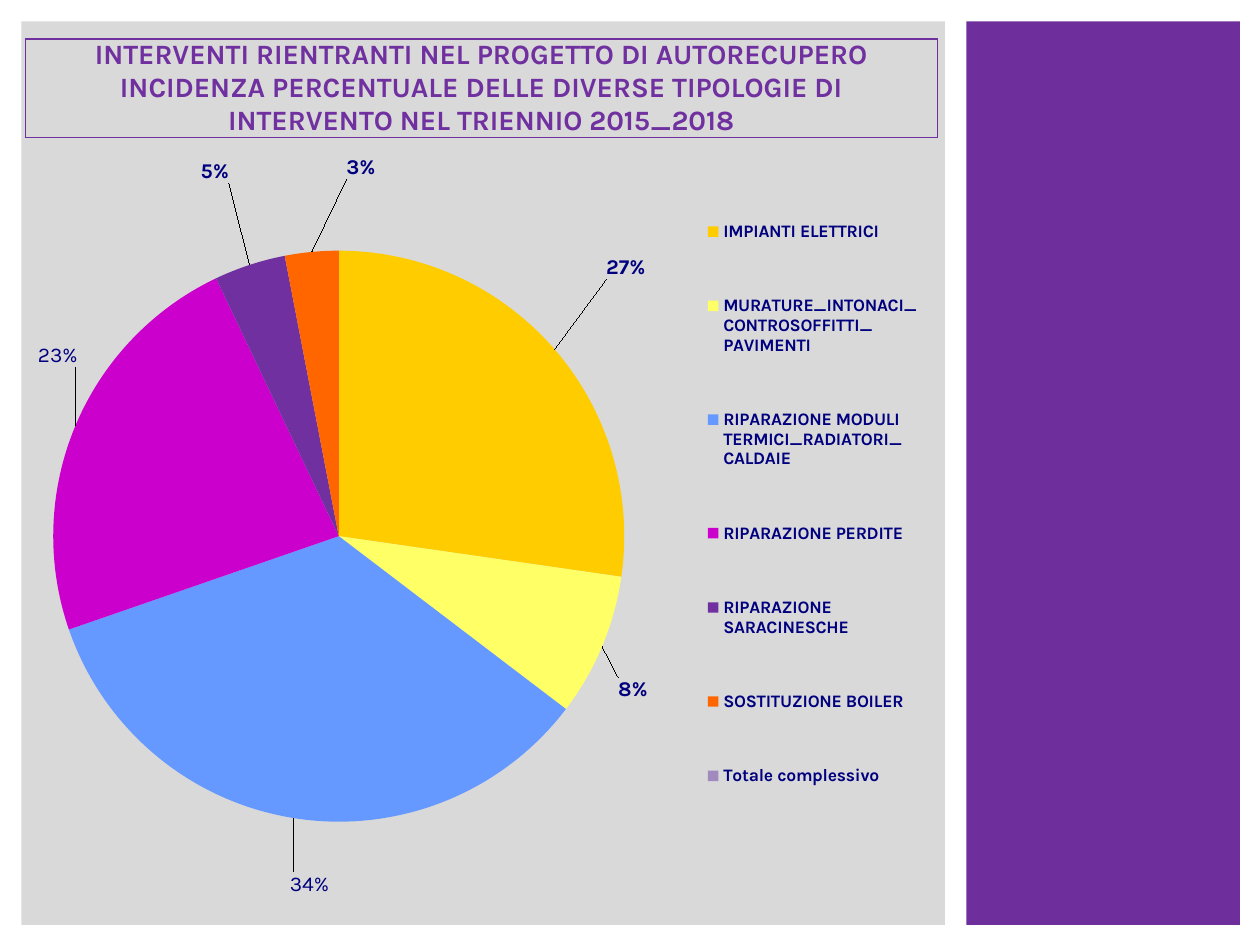
from lxml import etree
from pptx import Presentation
from pptx.chart.data import CategoryChartData
from pptx.dml.color import RGBColor
from pptx.enum import chart as charts, shapes, text
from pptx.oxml.ns import qn
from pptx.util import Inches, Pt

WHITE = RGBColor(0xFF, 0xFF, 0xFF)
GREY = RGBColor(0xD9, 0xD9, 0xD9)
PURPLE = RGBColor(0x6E, 0x2F, 0x9D)
VIOLET = RGBColor(0x70, 0x30, 0xA0)
NAVY = RGBColor(0x00, 0x00, 0x7F)
GOLD = RGBColor(0xFF, 0xCC, 0x00)
YELLOW = RGBColor(0xFF, 0xFF, 0x66)
BLUE = RGBColor(0x66, 0x99, 0xFF)
MAGENTA = RGBColor(0xCC, 0x00, 0xCC)
ORANGE = RGBColor(0xFF, 0x66, 0x00)
LILAC = RGBColor(0xA0, 0x8A, 0xBE)
FONT = "Karla"


def style(font, size, color, bold):
    font.name, font.size, font.bold = FONT, Pt(size), bold
    font.color.rgb = color


def manual_layout(**values):
    layout = etree.Element(qn("c:layout"))
    manual = etree.SubElement(layout, qn("c:manualLayout"))
    for tag, value in values.items():
        etree.SubElement(manual, qn(f"c:{tag}")).set("val", str(value))
    return layout


deck = Presentation()
deck.slide_width, deck.slide_height = Inches(10), Inches(7.5)
slide = deck.slides.add_slide(deck.slide_layouts[6])
slide.background.fill.solid()
slide.background.fill.fore_color.rgb = GREY

for left, top, width, height, color in [
    (0, 0, 10, 7.5, WHITE),
    (7.67, 0.17, 2.17, 7.17, PURPLE),
    (0.17, 0.17, 7.33, 7.17, GREY),
]:
    panel = slide.shapes.add_shape(
        shapes.MSO_SHAPE.RECTANGLE,
        Inches(left), Inches(top), Inches(width), Inches(height))
    panel.shadow.inherit = False
    panel.fill.solid()
    panel.fill.fore_color.rgb = color
    panel.line.fill.background()

interventions = [
    ("IMPIANTI ELETTRICI", 27, GOLD, "27%", True, 0.05, -0.07),
    ("MURATURE_INTONACI_ CONTROSOFFITTI_ PAVIMENTI", 8, YELLOW, "8%", True, 0.01, 0.03),
    ("RIPARAZIONE MODULI TERMICI_RADIATORI_ CALDAIE", 34, BLUE, "34%", False, 0.04, 0.05),
    ("RIPARAZIONE PERDITE", 23, MAGENTA, "23%", False, 0.01, -0.06),
    ("RIPARAZIONE SARACINESCHE", 4, VIOLET, "5%", True, -0.02, -0.08),
    ("SOSTITUZIONE BOILER", 3, ORANGE, "3%", True, 0.07, -0.07),
    ("Totale complessivo", None, LILAC, None, True, 0, 0),
]
shares = CategoryChartData()
shares.categories = [row[0] for row in interventions]
shares.add_series("Series 1", [row[1] for row in interventions])
pie = slide.shapes.add_chart(
    charts.XL_CHART_TYPE.PIE, Inches(0.2), Inches(0),
    Inches(7.32), Inches(7.37), shares).chart
pie.has_title = False
style(pie.font, 10, NAVY, False)
pie.plots[0].vary_by_categories = True

series = pie.plots[0].series[0]
series.data_labels.show_value = False
for index, (_, _, color, share, bold, dx, dy) in enumerate(interventions):
    point = series.points[index]
    point.format.fill.solid()
    point.format.fill.fore_color.rgb = color
    point.format.line.fill.background()
    if share:
        label = point.data_label
        label.text_frame.text = share
        style(label.text_frame.paragraphs[0].runs[0].font, 12, NAVY, bold)
        label.position = charts.XL_LABEL_POSITION.OUTSIDE_END
        label_xml = series.data_labels._element.findall(qn("c:dLbl"))[index]
        for old in label_xml.findall(qn("c:layout")):
            label_xml.remove(old)
        label_xml.insert(1, manual_layout(x=dx, y=dy))

plot_area = pie._chartSpace.chart.plotArea
for old in plot_area.findall(qn("c:layout")):
    plot_area.remove(old)
plot_area.insert(0, manual_layout(
    layoutTarget="inner", xMode="edge", yMode="edge", x=0.03, y=0.27, w=0.62, h=0.615))

pie.has_legend = True
legend = pie.legend
legend.position = charts.XL_LEGEND_POSITION.RIGHT
legend.include_in_layout = False
style(legend.font, 10, NAVY, True)
for old in legend._element.findall(qn("c:layout")):
    legend._element.remove(old)
legend._element.find(qn("c:legendPos")).addnext(manual_layout(
    xMode="edge", yMode="edge", x=0.736, y=0.18, w=0.235, h=0.725))

title_table = slide.shapes.add_table(
    1, 1, Inches(0.2), Inches(0.31), Inches(7.24), Inches(0.77)).table
title = title_table.cell(0, 0)
title.fill.background()
title.margin_left = title.margin_right = Inches(0.12)
title.margin_top = title.margin_bottom = 0
title.text_frame.text = (
    "INTERVENTI RIENTRANTI NEL PROGETTO DI AUTORECUPERO "
    "INCIDENZA PERCENTUALE DELLE DIVERSE TIPOLOGIE DI "
    "INTERVENTO NEL TRIENNIO 2015_2018")
heading = title.text_frame.paragraphs[0]
heading.alignment = text.PP_ALIGN.CENTER
style(heading.runs[0].font, 16, VIOLET, True)
cell_xml = title._tc.get_or_add_tcPr()
for order, side in enumerate(["lnL", "lnR", "lnT", "lnB"]):
    border = etree.Element(qn(f"a:{side}"), w=str(Pt(0.75)))
    fill = etree.SubElement(border, qn("a:solidFill"))
    etree.SubElement(fill, qn("a:srgbClr")).set("val", str(VIOLET))
    cell_xml.insert(order, border)

deck.save("out.pptx")
